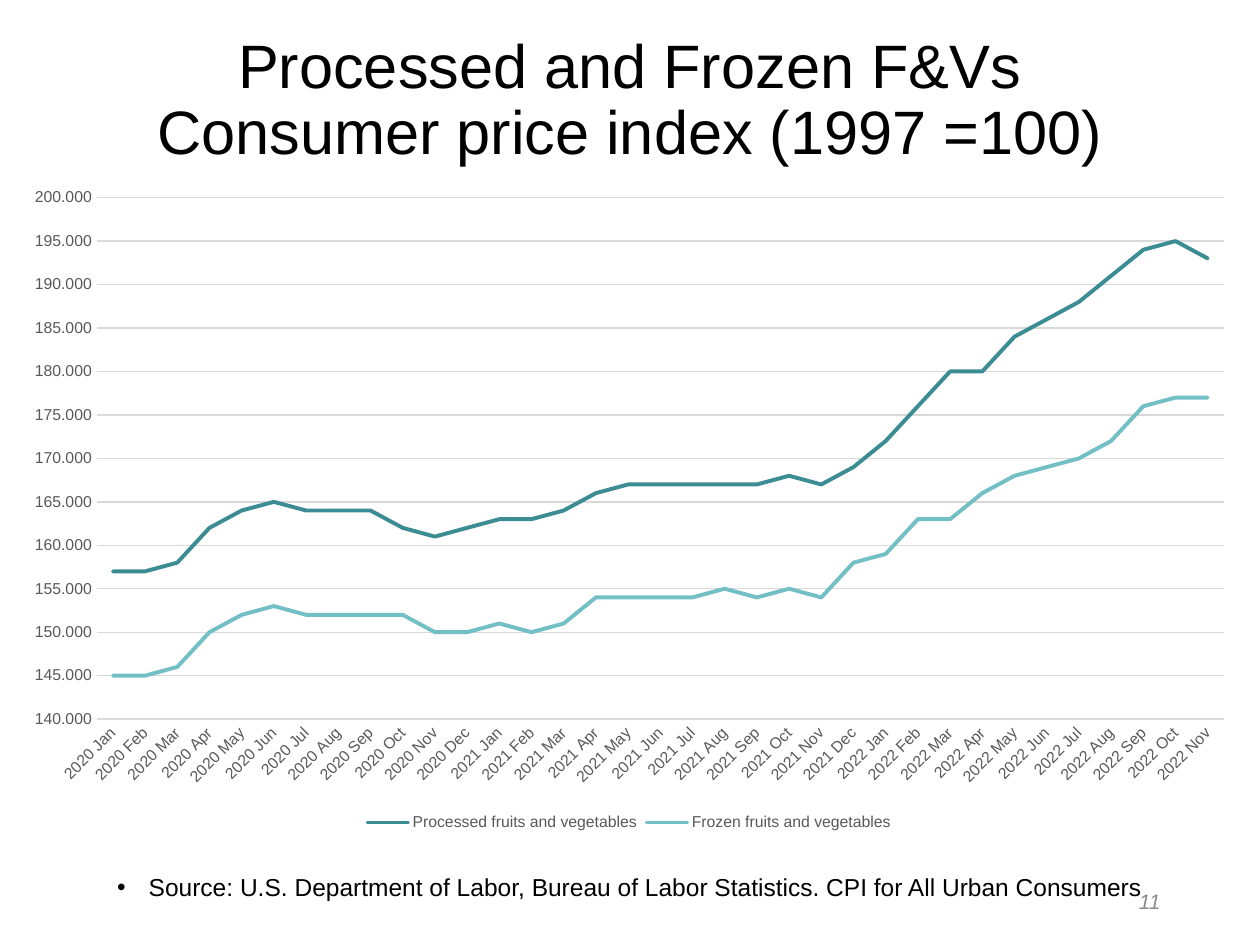
"""Build a slide charting the price indexes of processed and frozen produce."""
import pptx
import pptx.chart.data
import pptx.dml.color
import pptx.enum.chart
import pptx.enum.text
import pptx.oxml.ns
import pptx.util
from lxml import etree

BLACK = pptx.dml.color.RGBColor(0x00, 0x00, 0x00)
PAGE_GRAY = pptx.dml.color.RGBColor(0x8C, 0x8C, 0x8C)
LABEL_GRAY = pptx.dml.color.RGBColor(0x59, 0x59, 0x59)
GRID_GRAY = pptx.dml.color.RGBColor(0xD9, 0xD9, 0xD9)
DARK_TEAL = pptx.dml.color.RGBColor(0x3C, 0x8C, 0x93)
LIGHT_TEAL = pptx.dml.color.RGBColor(0x72, 0xBF, 0xC5)
FONT = "Arial"
ALIGN = pptx.enum.text.PP_ALIGN

presentation = pptx.Presentation()
presentation.slide_width = pptx.util.Inches(10)
presentation.slide_height = pptx.util.Inches(7.5)
slide = presentation.slides.add_slide(presentation.slide_layouts[5])


def share(left, top, width, height):
    """Turn percentages of the slide's size into lengths."""
    across, down = presentation.slide_width, presentation.slide_height
    return [int(part * whole / 100) for part, whole in
            zip((left, top, width, height), (across, down, across, down))]


def write(text, shape=None, box=None, size=14, color=BLACK, align=ALIGN.CENTER,
          italic=False, line_spacing=None, bullet=None):
    """Write one formatted paragraph into a shape or a new text box."""
    if shape is None:
        shape = slide.shapes.add_textbox(*share(*box))
    else:
        shape.left, shape.top, shape.width, shape.height = share(*box)
    frame = shape.text_frame
    frame.word_wrap = True
    frame.auto_size = pptx.enum.text.MSO_AUTO_SIZE.NONE
    frame.vertical_anchor = pptx.enum.text.MSO_ANCHOR.MIDDLE
    paragraph = frame.paragraphs[0]
    paragraph.text = text
    paragraph.alignment = align
    paragraph.space_after = pptx.util.Pt(6)
    if line_spacing:
        paragraph.line_spacing = line_spacing
    if bullet:
        properties = paragraph._p.get_or_add_pPr()
        indent = pptx.util.Inches(0.25)
        properties.set("marL", str(indent))
        properties.set("indent", str(-indent))
        etree.SubElement(properties, pptx.oxml.ns.qn("a:buFont"), typeface=FONT)
        etree.SubElement(properties, pptx.oxml.ns.qn("a:buChar"), char=bullet)
        paragraph.font.size = pptx.util.Pt(size)
    font = paragraph.runs[0].font
    font.name = FONT
    font.size = pptx.util.Pt(size)
    font.italic = italic
    font.color.rgb = color


write("Processed and Frozen F&Vs Consumer price index (1997 =100)",
      shape=slide.shapes.title, box=(8.25, 2.65, 83.5, 16.3), size=35, line_spacing=0.9)
write("Source: U.S. Department of Labor, Bureau of Labor Statistics. CPI for All Urban Consumers",
      box=(8.25, 90.65, 83.5, 6.8), line_spacing=0.9, bullet="•")
write("11", box=(70.6, 92.7, 22.5, 5.3), size=12, color=PAGE_GRAY, align=ALIGN.RIGHT, italic=True)

months = "Jan Feb Mar Apr May Jun Jul Aug Sep Oct Nov Dec".split()
processed = [
    157, 157, 158, 162, 164, 165, 164, 164, 164, 162, 161, 162,
    163, 163, 164, 166, 167, 167, 167, 167, 167, 168, 167, 169,
    172, 176, 180, 180, 184, 186, 188, 191, 194, 195, 193]
frozen = [
    145, 145, 146, 150, 152, 153, 152, 152, 152, 152, 150, 150,
    151, 150, 151, 154, 154, 154, 154, 155, 154, 155, 154, 158,
    159, 163, 163, 166, 168, 169, 170, 172, 176, 177, 177]

data = pptx.chart.data.CategoryChartData(number_format="#0.000")
data.categories = [f"{year} {month}" for year in (2020, 2021, 2022) for month in months][:len(processed)]
data.add_series("Processed fruits and vegetables", processed)
data.add_series("Frozen fruits and vegetables", frozen)
chart = slide.shapes.add_chart(
    pptx.enum.chart.XL_CHART_TYPE.LINE, *share(0.8, 18.55, 98.3, 70), data).chart
chart.has_title = False
chart.font.name = FONT
chart.font.size = pptx.util.Pt(10)
chart.font.color.rgb = BLACK
chart.has_legend = True
chart.legend.position = pptx.enum.chart.XL_LEGEND_POSITION.BOTTOM
chart.legend.include_in_layout = False

category_axis, value_axis = chart.category_axis, chart.value_axis
for axis in (category_axis, value_axis):
    axis.major_tick_mark = pptx.enum.chart.XL_TICK_MARK.NONE
    axis.minor_tick_mark = pptx.enum.chart.XL_TICK_MARK.NONE
for font in (chart.legend.font, category_axis.tick_labels.font, value_axis.tick_labels.font):
    font.name = FONT
    font.size = pptx.util.Pt(9)
    font.color.rgb = LABEL_GRAY
category_axis._element.xpath("c:txPr/a:bodyPr")[0].set("rot", "-2700000")

value_axis.minimum_scale = 140
value_axis.maximum_scale = 200
value_axis.major_unit = 5
value_axis.tick_labels.number_format = "#0.000"
value_axis.tick_labels.number_format_is_linked = False
value_axis.format.line.fill.background()
for line in (category_axis.format.line, value_axis.major_gridlines.format.line):
    line.color.rgb = GRID_GRAY
    line.width = pptx.util.Pt(0.75)

chart.plots[0].vary_by_categories = False
for series, color in zip(chart.plots[0].series, (DARK_TEAL, LIGHT_TEAL)):
    series.smooth = False
    series.marker.style = pptx.enum.chart.XL_MARKER_STYLE.NONE
    series.format.line.color.rgb = color
    series.format.line.width = pptx.util.Pt(2.25)
    series._element.xpath("c:spPr/a:ln")[0].set("cap", "rnd")

presentation.save("out.pptx")
